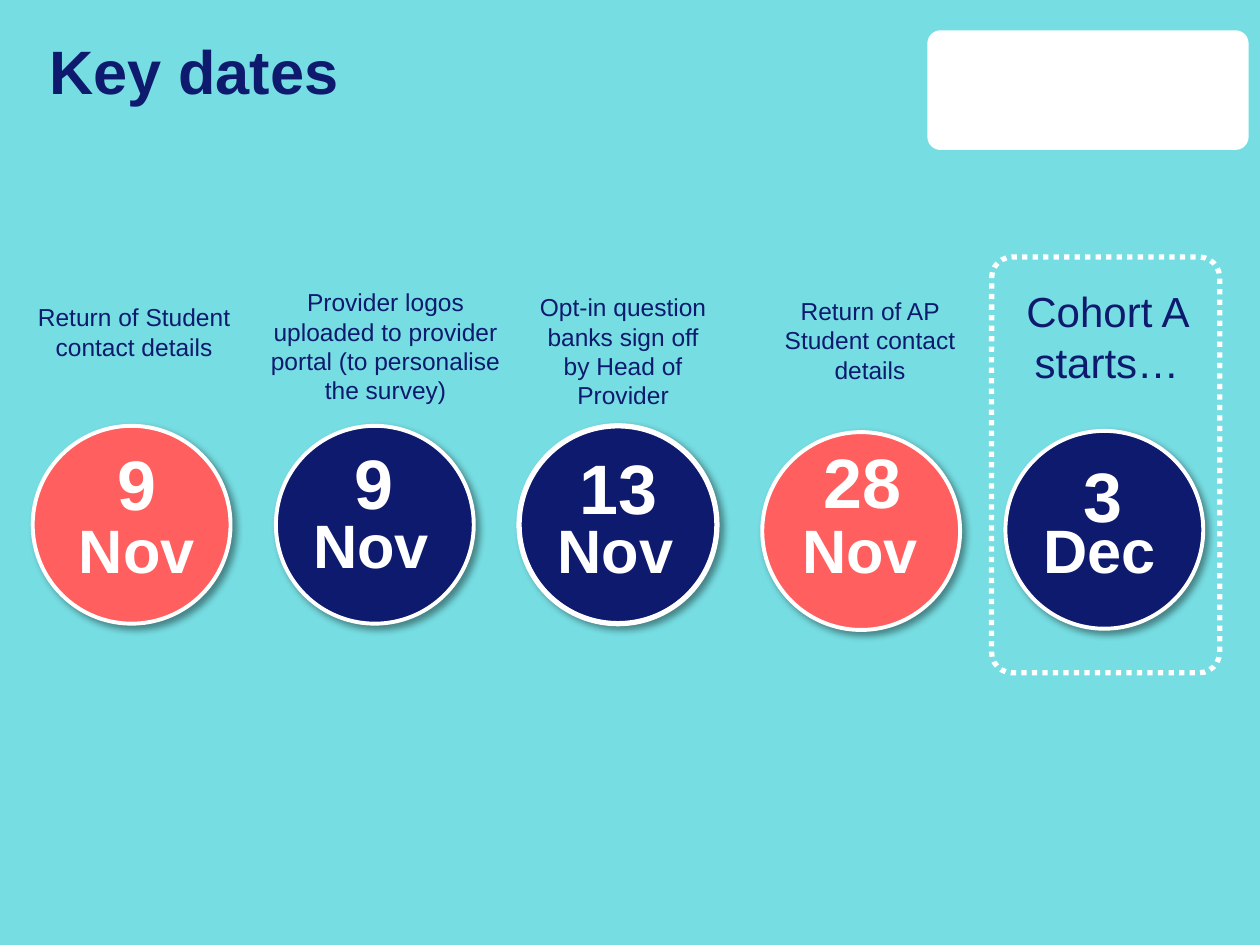
from lxml import etree
from pptx import Presentation
from pptx import util as u
from pptx.dml.color import RGBColor
from pptx.enum import dml, shapes, text
from pptx.oxml import ns

AQUA = RGBColor(0x76, 0xDD, 0xE2)
NAVY = RGBColor(0x0E, 0x1A, 0x6E)
CORAL = RGBColor(0xFF, 0x5F, 0x5F)
WHITE = RGBColor(0xFF, 0xFF, 0xFF)

presentation = Presentation()
presentation.slide_width, presentation.slide_height = u.Inches(10), u.Inches(7.5)
COLUMN = presentation.slide_width / 100
ROW = presentation.slide_height / 75

slide = presentation.slides.add_slide(presentation.slide_layouts[6])
slide.background.fill.solid()
slide.background.fill.fore_color.rgb = AQUA


def add_text(parent, box, words, color, align=text.PP_ALIGN.CENTER, **font_format):
    """Add a wrapped Arial text box; box is in columns and rows."""
    left, top, width, height = box
    shape = parent.add_textbox(
        round(left * COLUMN), round(top * ROW), round(width * COLUMN), round(height * ROW))
    frame = shape.text_frame
    frame.word_wrap = True
    frame.auto_size = text.MSO_AUTO_SIZE.SHAPE_TO_FIT_TEXT
    paragraph = frame.paragraphs[0]
    paragraph.alignment = align
    run = paragraph.add_run()
    run.text = words
    run.font.color.rgb = color
    for name, value in {"name": "Arial", **font_format}.items():
        setattr(run.font, name, value)
    return shape


def add_outline(parent, kind, box, fill, line_width):
    """Add a preset shape; a fill of None or a line width of 0 leaves that part out."""
    left, top, width, height = box
    shape = parent.add_shape(
        kind, round(left * COLUMN), round(top * ROW), round(width * COLUMN), round(height * ROW))
    shape.shadow.inherit = False
    if fill is None:
        shape.fill.background()
    else:
        shape.fill.solid()
        shape.fill.fore_color.rgb = fill
    if line_width:
        shape.line.color.rgb = WHITE
        shape.line.width = u.Pt(line_width)
    else:
        shape.line.fill.background()
    return shape


logo_panel = add_outline(slide.shapes, shapes.MSO_SHAPE.ROUNDED_RECTANGLE,
                         (73.6, 2.4, 25.5, 9.5), WHITE, 0)
logo_panel.adjustments[0] = 0.11

title = add_text(slide.shapes, (3.9, 2.1, 92.9, 10.3), "Key dates", NAVY,
                 align=text.PP_ALIGN.LEFT, size=u.Pt(35), bold=True)
title.text_frame.auto_size = text.MSO_AUTO_SIZE.NONE
title.text_frame.paragraphs[0].line_spacing = u.Pt(46)
for side in ("left", "top", "right", "bottom"):
    setattr(title.text_frame, f"margin_{side}", 0)

# label, label box, label size, circle top, fill, line width,
# day, day left and top, month, month left and top
dates = [
    ("Return of Student contact details", (0.3, 23.5, 20.7, 5.7), 14,
     33.8, CORAL, 2.25, "9", (2.3, 34.5), "Nov", (2.3, 40.2)),
    ("Provider logos uploaded to provider portal (to personalise the survey)",
     (20.5, 22.3, 20.2, 10.4), 14,
     33.8, NAVY, 2.25, "9", (21.1, 34.4), "Nov", (20.9, 39.8)),
    ("Opt-in question banks sign off by Head of Provider", (41.4, 22.7, 16.1, 10.4), 14,
     33.8, NAVY, 3, "13", (40.5, 34.8), "Nov", (40.3, 40.2)),
    ("Return of AP Student contact details", (59.5, 23, 19.1, 8.1), 14,
     34.3, CORAL, 2.25, "28", (59.9, 34.3), "Nov", (59.7, 40.2)),
    ("Cohort A starts…", (78.6, 22.2, 18.5, 9.1), 24,
     34.2, NAVY, 2.25, "3", (79, 35.4), "Dec", (78.7, 40.2)),
]
FIRST_CIRCLE, CIRCLE_PITCH, DIAMETER = 2.6, 19.3, 15.7

for index, (label, label_box, label_size, circle_top, fill, line_width,
            day, day_place, month, month_place) in enumerate(dates):
    group = slide.shapes.add_group_shape().shapes
    circle = add_outline(
        group, shapes.MSO_SHAPE.OVAL,
        (FIRST_CIRCLE + index * CIRCLE_PITCH, circle_top, DIAMETER, DIAMETER), fill, line_width)
    effects = circle._element.spPr.find(ns.qn("a:effectLst"))
    shadow = etree.SubElement(effects, ns.qn("a:outerShdw"), blurRad=str(u.Pt(4)),
                              dist=str(u.Pt(3)), dir="2700000", algn="tl", rotWithShape="0")
    shadow_color = etree.SubElement(shadow, ns.qn("a:srgbClr"), val="000000")
    etree.SubElement(shadow_color, ns.qn("a:alpha"), val="40000")

    add_text(group, label_box, label, NAVY, size=u.Pt(label_size))
    for words, place, height, size in ((day, day_place, 7.7, 40), (month, month_place, 6.9, 35)):
        add_text(group, (*place, 17.1, height), words, WHITE, size=u.Pt(size), bold=True)

start_frame = add_outline(slide.shapes, shapes.MSO_SHAPE.ROUNDED_RECTANGLE,
                          (78.7, 20.4, 18.1, 33), None, 3)
start_frame.adjustments[0] = 0.09
start_frame.line.dash_style = dml.MSO_LINE.ROUND_DOT

presentation.save("out.pptx")
